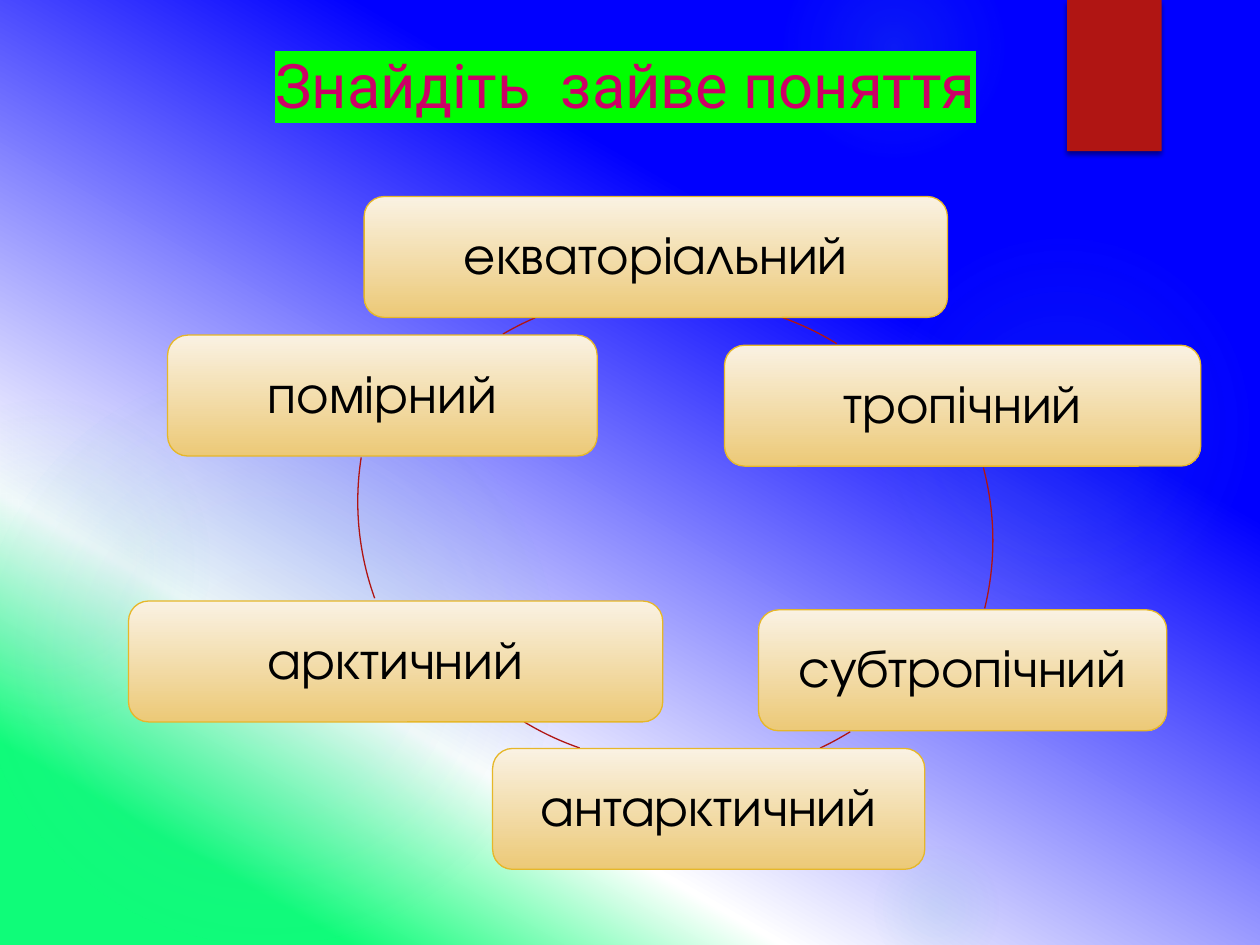
from math import atan2, degrees

from lxml.etree import SubElement
from pptx import Presentation
from pptx.dml.color import RGBColor
from pptx.enum.shapes import MSO_SHAPE
from pptx.enum.text import MSO_ANCHOR, PP_ALIGN
from pptx.oxml import parse_xml
from pptx.oxml.ns import nsdecls, qn
from pptx.util import Inches, Pt

TITLE = "Знайдіть  зайве поняття"
RED = "B01513"
GLOW = "50B9C1"
BOX_H = 0.96
RING = 4.54

# text, left, top, width
ZONES = [
    ("екваторіальний", 2.89, 1.56, 4.63),
    ("тропічний", 5.75, 2.74, 3.78),
    ("субтропічний", 6.02, 4.84, 3.24),
    ("антарктичний", 3.91, 5.94, 3.43),
    ("арктичний", 1.02, 4.77, 4.24),
    ("помірний", 1.33, 2.66, 3.41),
]
# left and top of the ring, then the start and end points of the arc
ARCS = [
    (3.18, 2.39, (6.21, 2.53), (6.64, 2.73)),
    (3.34, 2.02, (7.81, 3.71), (7.82, 4.83)),
    (3.28, 1.61, (6.75, 5.81), (6.51, 5.94)),
    (3.07, 1.52, (4.6, 5.94), (4.16, 5.73)),
    (2.84, 1.71, (2.97, 4.75), (2.86, 3.63)),
    (2.87, 2.34, (3.99, 2.65), (4.25, 2.53)),
]
# left, top, size, then (position, opacity) stops
GLOWS = [
    (6.89, 1.83, 3.08, [(0, 7), (36, 6), (69, 0)]),
    (6.22, -0.5, 1.75, [(0, 14), (36, 7), (73, 0)]),
    (6.89, 6.67, 1.08, [(0, 9), (36, 5), (66, 0)]),
    (-0.17, 2.92, 4.58, [(0, 11), (36, 10), (75, 0)]),
    (-0.92, 3.17, 2.58, [(0, 8), (36, 8), (72, 0)]),
]
SKY = [(31, "0000FF", 100), (73, "FFFFFF", 91), (88, "0FFC79", 100)]
SAND = [(0, "FAF2E3", 100), (100, "ECC977", 100)]


def color(code):
    return RGBColor.from_string(code)


def blend(fill, props, stops, angle=None):
    """Fill with a gradient: linear at an angle, or round without one."""
    fill.solid()
    marks = "".join(
        f'<a:gs pos="{pos * 1000}"><a:srgbClr val="{code}">'
        f'<a:alpha val="{alpha * 1000}"/></a:srgbClr></a:gs>'
        for pos, code, alpha in stops)
    if angle is None:
        way = ('<a:path path="circle"><a:fillToRect l="50000" t="50000" '
               'r="50000" b="50000"/></a:path>')
    else:
        way = f'<a:lin ang="{angle * 60000}" scaled="0"/>'
    grad = parse_xml(f'<a:gradFill {nsdecls("a")} rotWithShape="1">'
                     f'<a:gsLst>{marks}</a:gsLst>{way}</a:gradFill>')
    props.replace(props.find(qn("a:solidFill")), grad)


def add(slide, kind, left, top, width, height, line=None):
    shape = slide.shapes.add_shape(
        kind, Inches(left), Inches(top), Inches(width), Inches(height))
    shape.shadow.inherit = False
    if line:
        shape.line.color.rgb = color(line)
        shape.line.width = Pt(0.75)
    else:
        shape.line.fill.background()
    return shape


def write(frame, text, size, font, code):
    frame.text = text
    para = frame.paragraphs[0]
    para.alignment = PP_ALIGN.CENTER
    run = para.runs[0]
    run.font.size = Pt(size)
    run.font.name = font
    run.font.color.rgb = color(code)
    return run


def add_glow(slide, left, top, size, stops):
    glow = add(slide, MSO_SHAPE.OVAL, left, top, size, size)
    blend(glow.fill, glow.element.spPr,
          [(pos, GLOW, alpha) for pos, alpha in stops])


def add_tab(slide):
    tab = add(slide, MSO_SHAPE.RECTANGLE, 8.47, 0, 0.75, 1.2)
    tab.fill.solid()
    tab.fill.fore_color.rgb = color(RED)
    effects = tab.element.spPr.find(qn("a:effectLst"))
    shade = SubElement(effects, qn("a:outerShdw"), blurRad=str(Pt(3)),
                       dist=str(Pt(2)), dir="5400000", rotWithShape="0")
    tint = SubElement(shade, qn("a:srgbClr"), val="000000")
    SubElement(tint, qn("a:alpha"), val="45000")


def add_arc(slide, left, top, *ends):
    arc = add(slide, MSO_SHAPE.ARC, left, top, RING, RING, RED)
    arc.fill.background()
    for i, (x, y) in enumerate(ends):
        turn = degrees(atan2(y - top - RING / 2, x - left - RING / 2)) % 360
        arc.adjustments[i] = turn * 0.6  # units of 100000/60000 degree


def add_zone(slide, text, left, top, width):
    box = add(slide, MSO_SHAPE.ROUNDED_RECTANGLE,
              left, top, width, BOX_H, "E6B729")
    blend(box.fill, box.element.spPr, SAND, 90)
    frame = box.text_frame
    frame.word_wrap = True
    frame.vertical_anchor = MSO_ANCHOR.MIDDLE
    write(frame, text, 31, "TeX Gyre Adventor", "000000")
    frame.paragraphs[0].line_spacing = 0.9


def add_title(slide):
    box = slide.shapes.add_textbox(
        Inches(0.28), Inches(0.29), Inches(9.37), Inches(0.79))
    frame = box.text_frame
    frame.word_wrap = True
    frame.margin_top = Inches(0.08)
    run = write(frame, TITLE, 35.1, "Roboto", "CC0066")
    mark = parse_xml(f'<a:highlight {nsdecls("a")}>'
                     '<a:srgbClr val="00FF00"/></a:highlight>')
    run.font.fill.solid()
    run.font.color.rgb = color("CC0066")
    run._r.rPr.find(qn("a:solidFill")).addnext(mark)


def main():
    deck = Presentation()
    deck.slide_width, deck.slide_height = Inches(10), Inches(7.5)
    slide = deck.slides.add_slide(deck.slide_layouts[6])
    fill = slide.background.fill
    fill.solid()
    blend(fill, slide.element.find(".//" + qn("p:bgPr")), SKY, 120)
    for glow in GLOWS:
        add_glow(slide, *glow)
    add_tab(slide)
    for arc in ARCS:
        add_arc(slide, *arc)
    for zone in ZONES:
        add_zone(slide, *zone)
    add_title(slide)
    deck.save("out.pptx")


if __name__ == "__main__":
    main()
